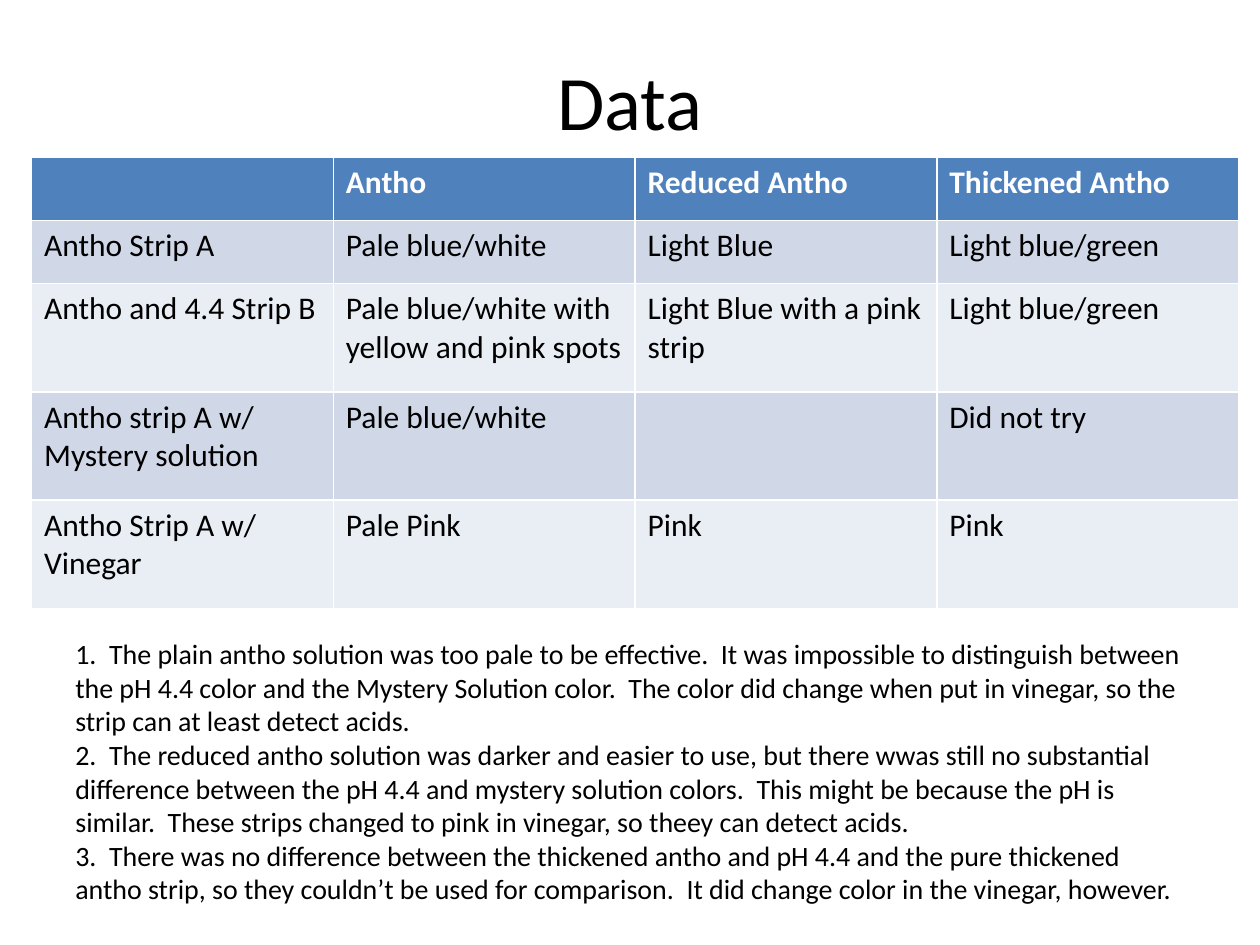
from typing import NamedTuple

from pptx import Presentation
from pptx.dml.color import RGBColor
from pptx.enum.text import MSO_ANCHOR, PP_ALIGN
from pptx.util import Inches, Pt

FONT = "Calibri"
BLACK = RGBColor(0x00, 0x00, 0x00)
WHITE = RGBColor(0xFF, 0xFF, 0xFF)
BLUE = RGBColor(0x4F, 0x81, 0xBD)
BANDS = (RGBColor(0xD0, 0xD8, 0xE8), RGBColor(0xE9, 0xED, 0xF4))

WIDTH, HEIGHT = Inches(10), Inches(7.5)
MARGIN = 0.05  # share of the slide's width


class Row(NamedTuple):
    height: float  # inches
    cells: tuple[str, ...]


SHORT, TALL = 0.5, 0.86
ROWS = (
    Row(SHORT, ("", "Antho", "Reduced Antho", "Thickened Antho")),
    Row(SHORT, ("Antho Strip A", "Pale blue/white", "Light Blue", "Light blue/green")),
    Row(TALL, ("Antho and 4.4 Strip B", "Pale blue/white with yellow and pink spots",
               "Light Blue with a pink strip", "Light blue/green")),
    Row(TALL, ("Antho strip A w/ Mystery solution", "Pale blue/white", "", "Did not try")),
    Row(TALL, ("Antho Strip A w/ Vinegar", "Pale Pink", "Pink", "Pink")),
)
NOTES = (
    "1.  The plain antho solution was too pale to be effective.  It was impossible to "
    "distinguish between the pH 4.4 color and the Mystery Solution color.  The color did "
    "change when put in vinegar, so the strip can at least detect acids.",
    "2.  The reduced antho solution was darker and easier to use, but there wwas still no "
    "substantial difference between the pH 4.4 and mystery solution colors.  This might be "
    "because the pH is similar.  These strips changed to pink in vinegar, so theey can "
    "detect acids.",
    "3.  There was no difference between the thickened antho and pH 4.4 and the pure "
    "thickened antho strip, so they couldn’t be used for comparison.  It did change color "
    "in the vinegar, however.",
)


def style(frame, size: int, color: RGBColor = BLACK, bold: bool = False,
          align: PP_ALIGN = PP_ALIGN.LEFT) -> None:
    for para in frame.paragraphs:
        para.alignment = align
        for run in para.runs:
            font = run.font
            font.name, font.size, font.bold = FONT, Pt(size), bold
            font.color.rgb = color


def place(shape, top: float, height: float) -> None:
    shape.left, shape.width = int(WIDTH * MARGIN), int(WIDTH * (1 - 2 * MARGIN))
    shape.top, shape.height = Inches(top), Inches(height)
    shape.text_frame.word_wrap = True
    shape.text_frame.vertical_anchor = MSO_ANCHOR.MIDDLE


def add_grid(slide, rows: tuple[Row, ...]) -> None:
    total = sum(row.height for row in rows)
    table = slide.shapes.add_table(len(rows), len(rows[0].cells), Inches(0.25),
                                   Inches(1.25), Inches(9.58), Inches(total)).table
    for r, row in enumerate(rows):
        table.rows[r].height = Inches(row.height)
        head = r == 0
        for c, text in enumerate(row.cells):
            cell = table.cell(r, c)
            cell.text_frame.text = text
            cell.fill.solid()
            cell.fill.fore_color.rgb = BLUE if head else BANDS[(r - 1) % 2]
            style(cell.text_frame, 18, WHITE if head else BLACK, head)


def main() -> None:
    deck = Presentation()
    deck.slide_width, deck.slide_height = WIDTH, HEIGHT
    slide = deck.slides.add_slide(deck.slide_layouts[5])

    # Title
    title = slide.shapes.title
    place(title, 0.17, 1.25)
    title.text_frame.text = "Data"
    style(title.text_frame, 44, align=PP_ALIGN.CENTER)

    # Strip results
    add_grid(slide, ROWS)

    # Findings
    notes = slide.shapes.add_textbox(0, 0, 0, 0)
    place(notes, 5.08, 2.08)
    notes.text_frame.text = "\n".join(NOTES)
    style(notes.text_frame, 16)

    deck.save("out.pptx")


if __name__ == "__main__":
    main()
